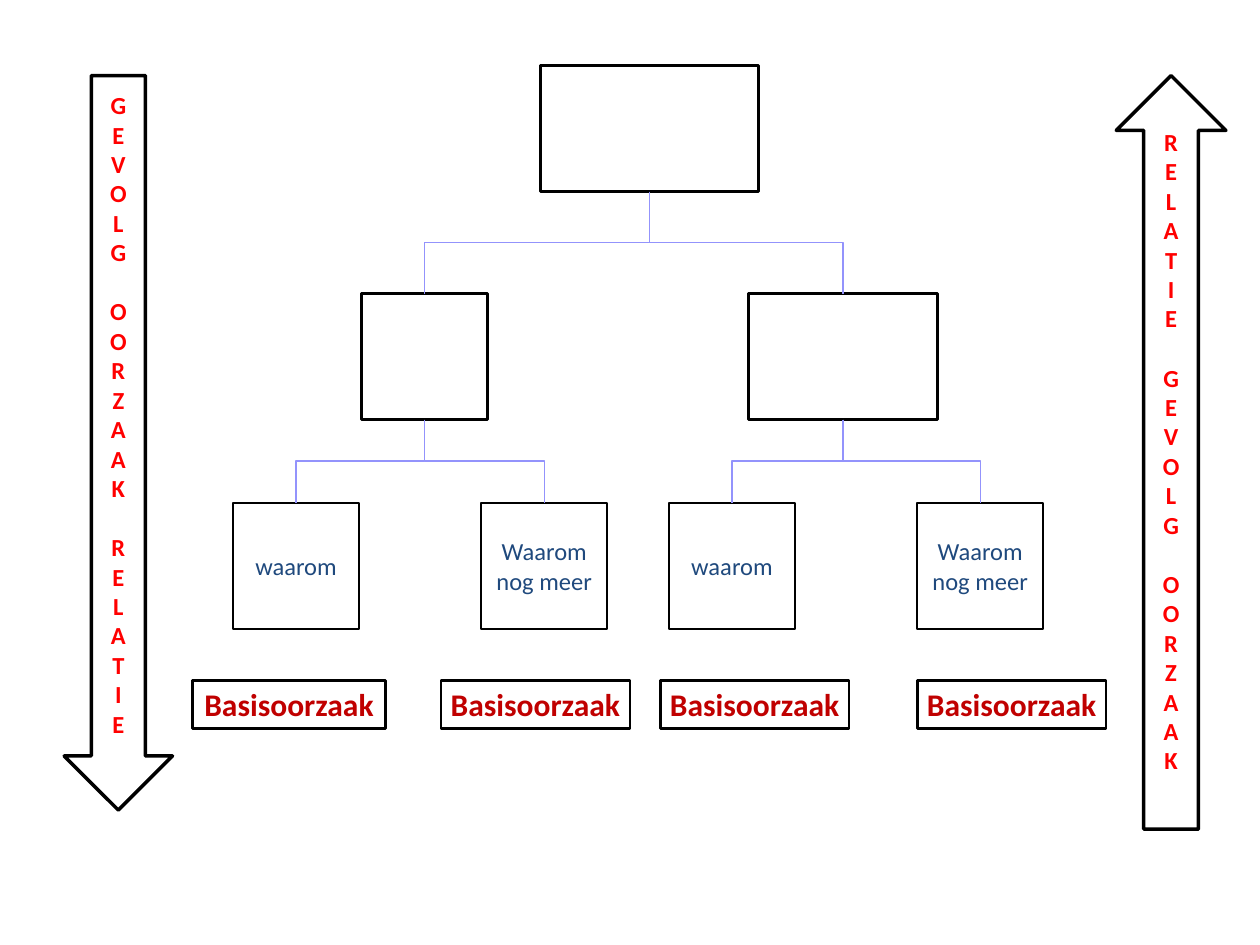
from pptx import Presentation
from pptx.dml.color import RGBColor
from pptx.enum.shapes import MSO_CONNECTOR, MSO_SHAPE
from pptx.enum.text import MSO_ANCHOR, PP_ALIGN
from pptx.oxml.ns import qn
from pptx.util import Inches, Pt
from lxml import etree

COLORS = {
    "white": "FFFFFF",
    "black": "000000",
    "link": "9393FC",
    "question": "1F497D",
    "cause": "C00000",
    "relation": "FF0000",
}


def color(name):
    return RGBColor.from_string(COLORS[name])


def add_box(slide, box, line_width, kind=MSO_SHAPE.RECTANGLE, filled=True):
    sp = slide.shapes.add_shape(kind, *(Inches(v) for v in box))
    sp.shadow.inherit = False
    if filled:
        sp.fill.solid()
        sp.fill.fore_color.rgb = color("white")
    else:
        sp.fill.background()
    sp.line.color.rgb = color("black")
    sp.line.width = Pt(line_width)
    return sp


def style(p, size, name, bold=False):
    p.alignment = PP_ALIGN.CENTER
    p.font.name = "Calibri"
    p.font.size = Pt(size)
    p.font.bold = bold
    p.font.color.rgb = color(name)


def add_relation_arrow(slide, box, kind, words):
    sp = add_box(slide, box, 2, kind)
    tf = sp.text_frame
    tf.word_wrap = True
    tf.vertical_anchor = MSO_ANCHOR.MIDDLE
    tf.margin_bottom = Inches(0.29)
    letters = [(c, i == 0) for word in words for i, c in enumerate(word)]
    for n, (letter, starts_word) in enumerate(letters):
        p = tf.add_paragraph() if n else tf.paragraphs[0]
        p.text = letter
        style(p, 14, "relation", bold=True)
        if n and starts_word:
            p.space_before = Pt(17)


def add_question(slide, left, top, text):
    sp = add_box(slide, (left, top, 1, 1), 1)
    tf = sp.text_frame
    tf.word_wrap = True
    tf.vertical_anchor = MSO_ANCHOR.MIDDLE
    tf.text = text
    style(tf.paragraphs[0], 14, "question")
    return sp


def add_root_cause(slide, left, top, width):
    sp = add_box(slide, (left, top, width, 0.38), 1.5, filled=False)
    tf = sp.text_frame
    tf.word_wrap = True
    tf.vertical_anchor = MSO_ANCHOR.TOP
    tf.margin_left = tf.margin_right = Inches(0.04)
    tf.margin_top = tf.margin_bottom = Inches(0.04)
    tf.text = "Basisoorzaak"
    style(tf.paragraphs[0], 18, "cause", bold=True)


def link(slide, parent, child):
    x1, y1 = parent.left + parent.width // 2, parent.top + parent.height
    x2, y2 = child.left + child.width // 2, child.top
    cxn = slide.shapes.add_connector(MSO_CONNECTOR.ELBOW, x1, y1, x2, y2)
    cxn.begin_connect(parent, 2)
    cxn.end_connect(child, 0)
    run, drop = abs(x2 - x1), y2 - y1
    cxn.left = (x1 + x2 - drop) // 2
    cxn.top = (y1 + y2 - run) // 2
    cxn.width, cxn.height = drop, run
    goes_right = x2 > x1
    spPr = cxn._element.spPr
    xfrm = spPr.find(qn("a:xfrm"))
    xfrm.set("rot", str((270 if goes_right else 90) * 60000))
    xfrm.set("flipH", "1" if goes_right else "0")
    cxn.line.color.rgb = color("link")
    cxn.line.width = Pt(0.75)
    etree.SubElement(spPr, qn("a:effectLst"))


def add_cause_tree(slide, left, top):
    root = add_box(slide, (left + 2.76, top, 1.73, 1), 2)
    branches = [(1.34, 1, 0.32), (4.41, 1.5, 3.78)]
    for x, width, first in branches:
        branch = add_box(slide, (left + x, top + 1.81, width, 1), 2)
        link(slide, root, branch)
        for i, text in enumerate(["waarom", "Waarom nog meer"]):
            question = add_question(slide, left + first + i * 1.97, top + 3.47, text)
            link(slide, branch, question)
    for x, width in [(0, 1.53), (1.97, 1.5), (3.71, 1.5), (5.75, 1.5)]:
        add_root_cause(slide, left + x, top + 4.88, width)


def main():
    prs = Presentation()
    prs.slide_width, prs.slide_height = Inches(10), Inches(7.5)
    slide = prs.slides.add_slide(prs.slide_layouts[6])
    add_relation_arrow(slide, (0.51, 0.6, 0.86, 5.83), MSO_SHAPE.DOWN_ARROW,
                       ["GEVOLG", "OORZAAK", "RELATIE"])
    add_cause_tree(slide, 1.53, 0.52)
    add_relation_arrow(slide, (8.86, 0.6, 0.87, 5.98), MSO_SHAPE.UP_ARROW,
                       ["RELATIE", "GEVOLG", "OORZAAK"])
    prs.save("out.pptx")


if __name__ == "__main__":
    main()
